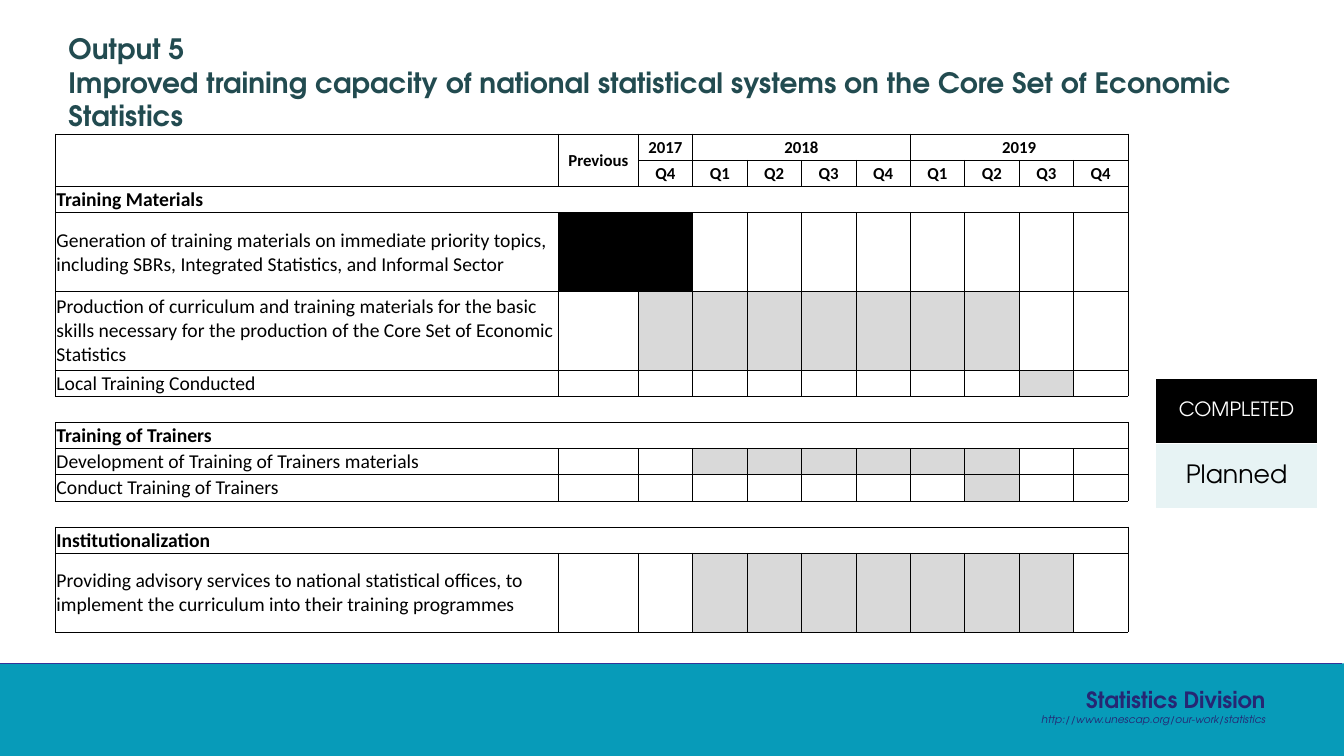
from lxml.etree import SubElement
from pptx import Presentation
from pptx.dml.color import RGBColor
from pptx.enum.shapes import MSO_CONNECTOR, MSO_SHAPE
from pptx.enum.text import MSO_ANCHOR, PP_ALIGN
from pptx.oxml.ns import qn
from pptx.util import Emu, Pt

EMU_PER_PX = 9144
DISPLAY = "TeX Gyre Adventor"
BODY = "Calibri"
BLACK, WHITE, GREY = "000000", "FFFFFF", "D9D9D9"
STATUS_FILLS = {"X": BLACK, "p": GREY, ".": WHITE}
YEARS = [("2017", 2, 2), ("2018", 3, 6), ("2019", 7, 10)]
QUARTERS = ["Q4"] + ["Q1", "Q2", "Q3", "Q4"] * 2
COLUMN_WIDTHS = [499, 79] + [54] * 9
ROW, TALL_ROW = 26, 78
SPACER = ("", None, ROW)
PLAN = [
    ("Training Materials", None, ROW),
    ("Generation of training materials on immediate priority topics, "
     "including SBRs, Integrated Statistics, and Informal Sector", "XX........", TALL_ROW),
    ("Production of curriculum and training materials for the basic skills necessary "
     "for the production of the Core Set of Economic Statistics", ".ppppppp..", TALL_ROW),
    ("Local Training Conducted", "........p.", ROW),
    SPACER,
    ("Training of Trainers", None, ROW),
    ("Development of Training of Trainers materials", "..pppppp..", ROW),
    ("Conduct Training of Trainers", ".......p..", ROW),
    SPACER,
    ("Institutionalization", None, ROW),
    ("Providing advisory services to national statistical offices, "
     "to implement the curriculum into their training programmes", "..ppppppp.", TALL_ROW),
]


def px(length):
    return Emu(length * EMU_PER_PX)


def box(*lengths):
    return [px(length) for length in lengths]


def color(value):
    return RGBColor.from_string(value)


def apply(target, settings):
    for key, value in settings.items():
        setattr(target, key, value)


def paint(target, value):
    target.fill.solid()
    target.fill.fore_color.rgb = color(value)


def write(paragraph, text, ink, align=PP_ALIGN.LEFT, **style):
    paragraph.text = text
    paragraph.alignment = align
    for run in paragraph.runs:
        apply(run.font, style)
        run.font.color.rgb = color(ink)


def add_text(slide, bounds, lines, anchor=MSO_ANCHOR.TOP):
    frame = slide.shapes.add_textbox(*box(*bounds)).text_frame
    apply(frame, {"word_wrap": True, "vertical_anchor": anchor})
    for index, line in enumerate(lines):
        paragraph = frame.add_paragraph() if index else frame.paragraphs[0]
        write(paragraph, **line)


def add_band(slide, bounds, fill):
    band = slide.shapes.add_shape(MSO_SHAPE.RECTANGLE, *box(*bounds))
    band.shadow.inherit = False
    paint(band, fill)
    band.line.fill.background()


def add_rule(slide, ends, ink, weight):
    rule = slide.shapes.add_connector(MSO_CONNECTOR.STRAIGHT, *box(*ends))
    rule.line.color.rgb = color(ink)
    rule.line.width = Pt(weight)
    SubElement(rule._element.spPr, qn("a:effectLst"))


def add_grid(slide, left, top, widths, heights):
    frame = slide.shapes.add_table(
        len(heights), len(widths), *box(left, top, sum(widths), sum(heights)))
    grid = frame.table
    apply(grid, {"first_row": False, "horz_banding": False})
    for column, width in zip(grid.columns, widths):
        column.width = px(width)
    for row, height in zip(grid.rows, heights):
        row.height = px(height)
    return grid


def border(cell, ink, weight, sides="LRTB"):
    properties = cell._tc.get_or_add_tcPr()
    for side in "LRTB":
        edge = SubElement(properties, qn(f"a:ln{side}"), w=str(Pt(weight)))
        if side in sides:
            fill = SubElement(edge, qn("a:solidFill"))
            SubElement(fill, qn("a:srgbClr"), val=ink)
        else:
            SubElement(edge, qn("a:noFill"))


def prepare_schedule_cell(cell, sides):
    border(cell, BLACK, 0.5, sides)
    paint(cell, WHITE)
    apply(cell, {"margin_left": px(1), "margin_right": px(1), "margin_top": px(1),
                 "margin_bottom": 0, "vertical_anchor": MSO_ANCHOR.MIDDLE})
    SubElement(cell.text_frame.paragraphs[0]._p, qn("a:endParaRPr"), sz="1200")


def write_heading(cell, text):
    write(cell.text_frame.paragraphs[0], text, BLACK, PP_ALIGN.CENTER,
          size=Pt(12), name=BODY, bold=True)


def add_schedule(slide):
    heights = [ROW, ROW] + [height for _, _, height in PLAN]
    schedule = add_grid(slide, 55, 133, COLUMN_WIDTHS, heights)
    last = len(COLUMN_WIDTHS) - 1
    for row in range(len(heights)):
        is_spacer = row > 1 and PLAN[row - 2] == SPACER
        for column in range(last + 1):
            prepare_schedule_cell(schedule.cell(row, column), "TB" if is_spacer else "LRTB")

    for column in (0, 1):
        schedule.cell(0, column).merge(schedule.cell(1, column))
    write_heading(schedule.cell(0, 1), "Previous")
    for year, first, final in YEARS:
        if final > first:
            schedule.cell(0, first).merge(schedule.cell(0, final))
        write_heading(schedule.cell(0, first), year)
    for column, quarter in enumerate(QUARTERS, 2):
        write_heading(schedule.cell(1, column), quarter)

    for row, (activity, statuses, _) in enumerate(PLAN, 2):
        label = schedule.cell(row, 0)
        if statuses is None:
            label.merge(schedule.cell(row, last))
        if activity:
            write(label.text_frame.paragraphs[0], activity, BLACK,
                  size=Pt(14), name=BODY, bold=statuses is None)
        for column, status in enumerate(statuses or "", 1):
            paint(schedule.cell(row, column), STATUS_FILLS[status])


def add_legend(slide):
    legend = add_grid(slide, 1146, 375, [161], [65, 65])
    entries = [("COMPLETED", 14, WHITE, BLACK), ("Planned", 18, BLACK, "E7F3F4")]
    for row, (status, size, ink, fill) in enumerate(entries):
        cell = legend.cell(row, 0)
        border(cell, WHITE, 1)
        paint(cell, fill)
        cell.vertical_anchor = MSO_ANCHOR.MIDDLE
        write(cell.text_frame.paragraphs[0], status, ink, PP_ALIGN.CENTER,
              size=Pt(size), name=DISPLAY, bold=False)


def add_footer(slide):
    add_band(slide, (0, 658, 1333, 92), "079BB9")
    add_rule(slide, (0, 658, 1331, 658), "333399", 0.75)
    shared = {"ink": "262673", "align": PP_ALIGN.RIGHT, "name": DISPLAY}
    add_text(slide, (972, 676, 293, 50), [
        {"text": "Statistics Division", "size": Pt(16), "bold": True, **shared},
        {"text": "http://www.unescap.org/our-work/statistics",
         "size": Pt(7.5), "italic": True, **shared},
    ])


def main():
    deck = Presentation()
    apply(deck, {"slide_width": px(1333), "slide_height": px(750)})
    slide = deck.slides.add_slide(deck.slide_layouts[6])
    add_footer(slide)
    add_text(slide, (58, 42, 1226, 79), [
        {"text": "Output 5\vImproved training capacity of national statistical systems "
                 "on the Core Set of Economic Statistics",
         "ink": "224B50", "size": Pt(20), "name": DISPLAY, "bold": True},
    ], MSO_ANCHOR.MIDDLE)
    add_legend(slide)
    add_schedule(slide)
    deck.save("out.pptx")


if __name__ == "__main__":
    main()
